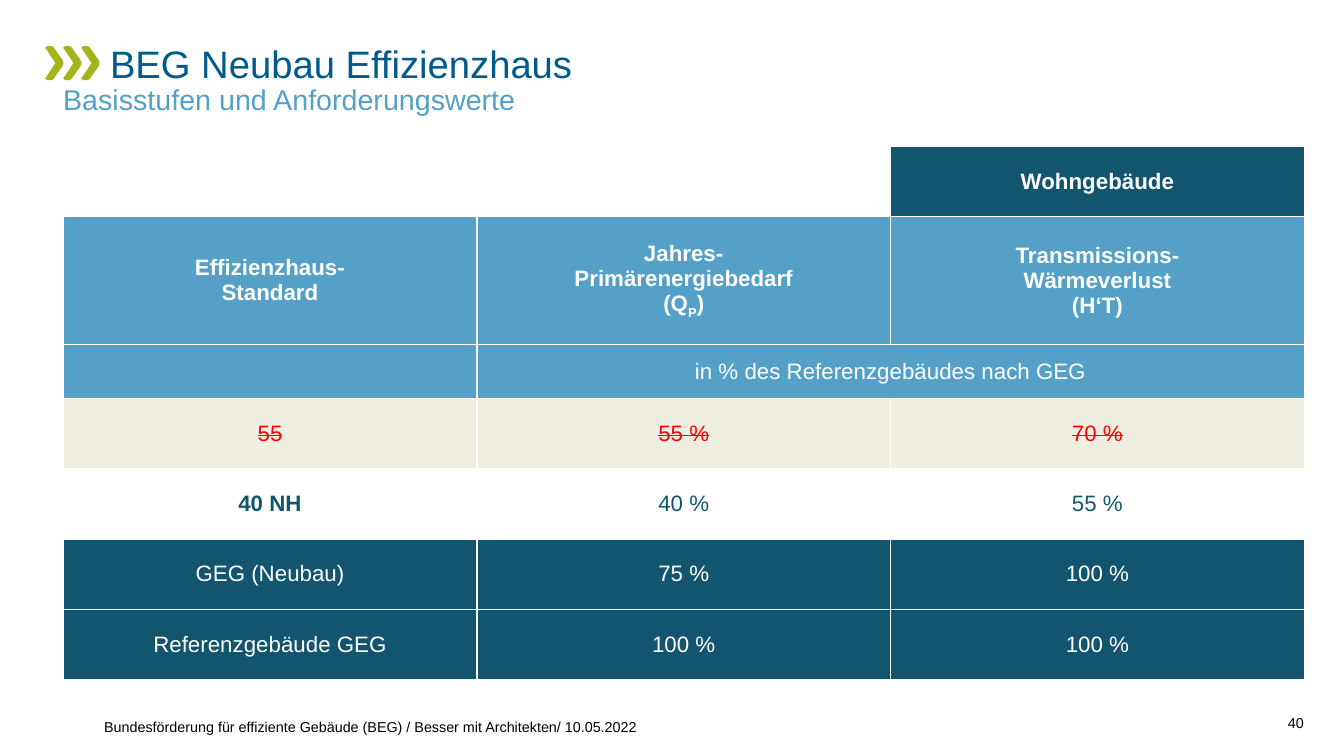
from lxml import etree
from pptx import Presentation
from pptx.dml.color import RGBColor
from pptx.enum.text import MSO_ANCHOR, PP_ALIGN
from pptx.oxml.ns import qn
from pptx.util import Cm, Pt

TOP, MIDDLE, BOTTOM = MSO_ANCHOR.TOP, MSO_ANCHOR.MIDDLE, MSO_ANCHOR.BOTTOM
LEFT, CENTER, RIGHT = PP_ALIGN.LEFT, PP_ALIGN.CENTER, PP_ALIGN.RIGHT

COLORS = {
    "green": "A4B419", "title": "005A8C", "sky": "55A0C6", "petrol": "13556F",
    "sand": "F0EEE1", "red": "FF0000", "white": "FFFFFF", "black": "000000",
}
CHEVRON = [(0.05, 0), (0, 0.04), (0.03, 0.08), (0.23, 0.38), (0.03, 0.68),
           (0, 0.72), (0.05, 0.76), (0.13, 0.76), (0.18, 0.74), (0.38, 0.46),
           (0.41, 0.38), (0.38, 0.3), (0.18, 0.02), (0.13, 0)]

# Table rows: height, fill, text colour, bold columns, struck out, cell texts.
# A new line starts a paragraph, \v breaks a line within one.
ROWS = [
    (1.56, "petrol", "white", {2}, False, ["", "", "Wohngebäude"]),
    (2.84, "sky", "white", {0, 1, 2}, False,
     ["Effizienzhaus-\nStandard", "Jahres-\nPrimärenergiebedarf\v(Q",
      "Transmissions-\nWärmeverlust\v(H‘T)"]),
    (1.19, "sky", "white", set(), False,
     ["", "in % des Referenzgebäudes nach GEG", ""]),
    (1.56, "sand", "red", set(), True, ["55", "55 %", "70 %"]),
    (1.56, "white", "petrol", {0}, False, ["40 NH", "40 %", "55 %"]),
    (1.56, "petrol", "white", set(), False, ["GEG (Neubau)", "75 %", "100 %"]),
    (1.56, "petrol", "white", set(), False,
     ["Referenzgebäude GEG", "100 %", "100 %"]),
]


def rgb(name):
    return RGBColor.from_string(COLORS[name])


class SlideBuilder:
    font_name = "Arial"

    def __init__(self, slide):
        self.slide = slide

    def style(self, para, size, color, align, bold=False):
        para.alignment = align
        font = para.font
        font.name, font.size, font.bold = self.font_name, Pt(size), bold
        font.color.rgb = rgb(color)

    def chevron(self, left, top):
        points = [(Cm(left + x), Cm(top + y)) for x, y in CHEVRON]
        builder = self.slide.shapes.build_freeform(*points[0])
        builder.add_line_segments(points[1:], close=True)
        shape = builder.convert_to_shape()
        shape.shadow.inherit = False
        shape.fill.solid()
        shape.fill.fore_color.rgb = rgb("green")
        shape.line.fill.background()

    def text(self, left, top, width, height, text, size, color,
             anchor=BOTTOM, align=LEFT, spacing=None, indent=0):
        box = self.slide.shapes.add_textbox(Cm(left), Cm(top), Cm(width), Cm(height))
        frame = box.text_frame
        frame.word_wrap = True
        frame.vertical_anchor = anchor
        frame.margin_left = frame.margin_right = 0
        frame.margin_top = frame.margin_bottom = 0
        para = frame.paragraphs[0]
        para.text = text
        para.line_spacing = spacing
        if indent:
            para._p.get_or_add_pPr().set("indent", str(Cm(indent)))
        self.style(para, size, color, align)

    def cell(self, cell, text, fill, color, bold, struck):
        properties = cell._tc.get_or_add_tcPr()
        for side in ("a:lnL", "a:lnR", "a:lnT", "a:lnB"):
            border = etree.SubElement(properties, qn(side), w=str(Pt(1)))
            solid = etree.SubElement(border, qn("a:solidFill"))
            etree.SubElement(solid, qn("a:srgbClr"), val=COLORS["white"])
        cell.fill.solid()
        cell.fill.fore_color.rgb = rgb(fill)
        cell.vertical_anchor = MIDDLE
        if not text:
            return
        cell.text = text
        for para in cell.text_frame.paragraphs:
            self.style(para, 14, color, CENTER, bold)
            if struck:
                para._p.get_or_add_pPr().get_or_add_defRPr().set("strike", "sngStrike")

    def table(self, left, top, column_width, rows):
        columns = len(rows[0][-1])
        height = sum(row[0] for row in rows)
        table = self.slide.shapes.add_table(
            len(rows), columns, Cm(left), Cm(top),
            Cm(columns * column_width), Cm(height)).table
        table.first_row = table.horz_banding = False
        for column in table.columns:
            column.width = Cm(column_width)
        for r, (row_height, fill, color, bold, struck, texts) in enumerate(rows):
            table.rows[r].height = Cm(row_height)
            for c, text in enumerate(texts):
                blank = r == 0 and not text
                self.cell(table.cell(r, c), text, "white" if blank else fill,
                          color, c in bold, struck)
        return table


def main():
    deck = Presentation()
    deck.slide_width, deck.slide_height = Cm(29.79), Cm(16.76)
    page = SlideBuilder(deck.slides.add_slide(deck.slide_layouts[6]))

    # Heading
    for i in range(3):
        page.chevron(1 + 0.4 * i, 1.02)
    page.text(1.4, 1.88, 27.4, 0.92, "Basisstufen und Anforderungswerte",
              18, "sky", TOP, spacing=0.95)
    page.text(1.4, 0.94, 27.4, 1.04, "BEG Neubau Effizienzhaus",
              24, "title", MIDDLE, spacing=0.95, indent=1.04)

    # Requirements table
    table = page.table(1.4, 3.24, 9.17, ROWS)
    table.cell(2, 1).merge(table.cell(2, 2))
    formula = table.cell(1, 1).text_frame.paragraphs[-1]
    subscript = formula.add_run()
    subscript.text = "P"
    subscript.font._element.set("baseline", "-25000")
    formula.add_run().text = ")"

    # Footer
    page.text(28.09, 15.6, 0.81, 0.61, "40", 9, "black", align=RIGHT)
    page.text(2.31, 15.7, 20.17, 0.61,
              "Bundesförderung für effiziente Gebäude (BEG) / "
              "Besser mit Architekten/ 10.05.2022", 9, "black")

    deck.save("out.pptx")


if __name__ == "__main__":
    main()
